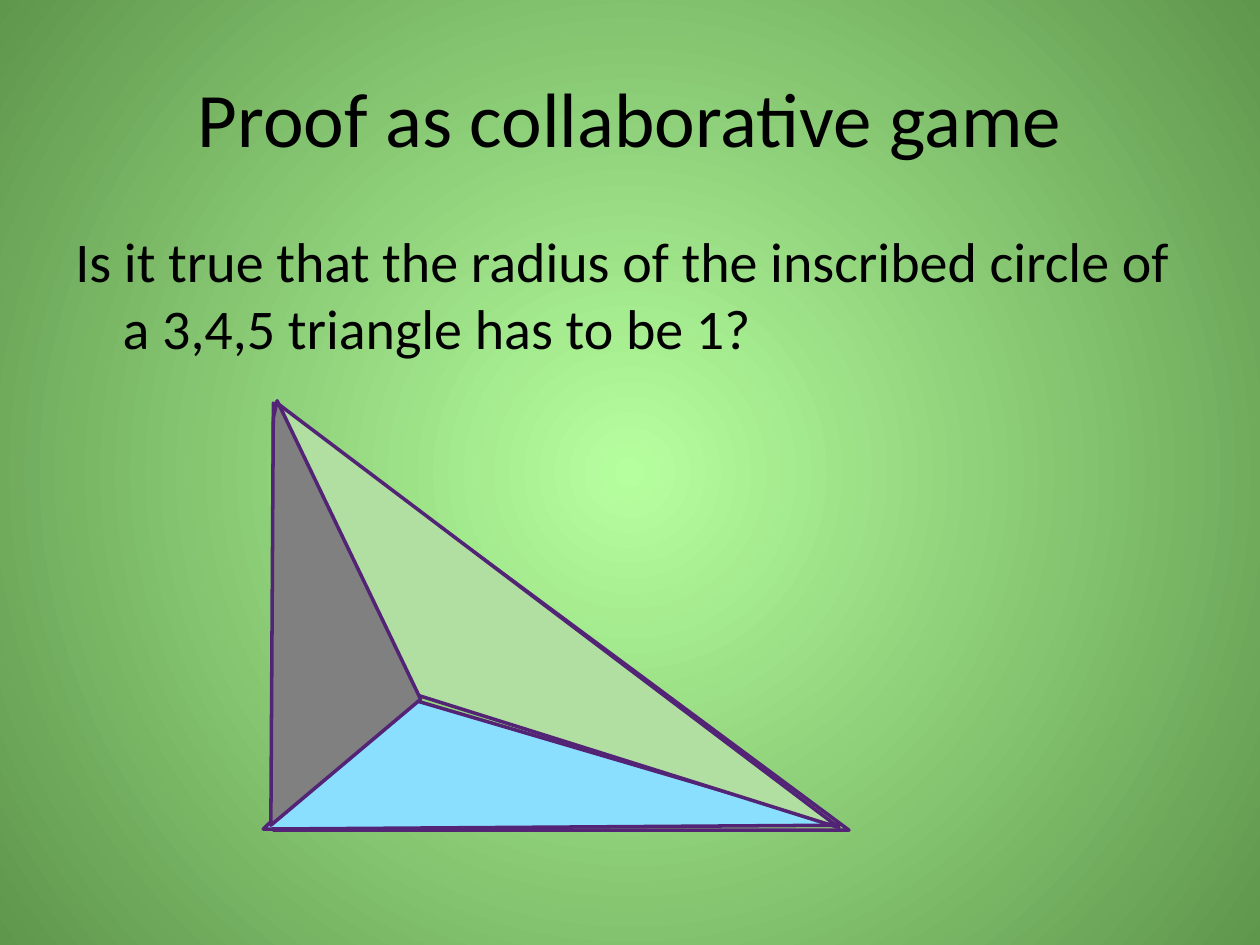
from dataclasses import dataclass

from pptx import Presentation
from pptx.dml.color import RGBColor
from pptx.enum.shapes import MSO_SHAPE
from pptx.enum.text import MSO_ANCHOR, PP_ALIGN
from pptx.oxml import parse_xml
from pptx.oxml.ns import nsdecls, qn
from pptx.util import Pt


@dataclass(frozen=True)
class Theme:
    """Colours, font and sizes of the slide."""
    font: str = "Calibri"
    title_size: float = 44
    body_size: float = 32
    ink: str = "000000"
    glow: str = "B6FF9F"
    edge: str = "5F974C"
    outline: str = "532476"
    outline_width: float = 2
    lower: str = "8ADFFF"
    upper: str = "B0DFA1"
    left: str = "808080"


THEME = Theme()


def paint_background(slide):
    """Fill the background with a radial gradient from the centre."""
    slide.background.fill.gradient()
    gradient = slide.background._cSld.find(".//" + qn("a:gradFill"))
    radial = parse_xml(
        f'<a:gradFill {nsdecls("a")} rotWithShape="1"><a:gsLst>'
        f'<a:gs pos="0"><a:srgbClr val="{THEME.glow}"/></a:gs>'
        f'<a:gs pos="100000"><a:srgbClr val="{THEME.edge}"/></a:gs></a:gsLst>'
        '<a:path path="circle"><a:fillToRect l="50000" t="50000" r="50000" b="50000"/>'
        '</a:path></a:gradFill>')
    gradient.getparent().replace(gradient, radial)


def add_text(slide, text, *, box, size, align=PP_ALIGN.LEFT, anchor=MSO_ANCHOR.TOP, hanging=0, before=0):
    """Place one wrapped paragraph in the box, with an optional hanging indent."""
    textbox = slide.shapes.add_textbox(*map(Pt, box))
    frame = textbox.text_frame
    frame.word_wrap = True
    frame.vertical_anchor = anchor
    paragraph = frame.paragraphs[0]
    paragraph.alignment = align
    paragraph.space_before = Pt(before)
    if hanging:
        properties = paragraph._p.get_or_add_pPr()
        properties.set("marL", str(Pt(hanging)))
        properties.set("indent", str(-Pt(hanging)))
    run = paragraph.add_run()
    run.text = text
    run.font.name = THEME.font
    run.font.size = Pt(size)
    run.font.color.rgb = RGBColor.from_string(THEME.ink)


def style_shape(shape, fill=None):
    """Give a shape the common outline and a flat fill, or none."""
    shape.shadow.inherit = False
    if fill:
        shape.fill.solid()
        shape.fill.fore_color.rgb = RGBColor.from_string(fill)
    else:
        shape.fill.background()
    shape.line.color.rgb = RGBColor.from_string(THEME.outline)
    shape.line.width = Pt(THEME.outline_width)


def add_polygon(slide, corners, fill):
    """Draw a closed outline through the corners."""
    points = [(Pt(x), Pt(y)) for x, y in corners]
    builder = slide.shapes.build_freeform(*points[0])
    builder.add_line_segments(points[1:], close=True)
    style_shape(builder.convert_to_shape(), fill)


def draw_triangle(slide, box):
    """Draw the outline of the right triangle and the three parts within it."""
    left, top, _, _ = box
    style_shape(slide.shapes.add_shape(MSO_SHAPE.RIGHT_TRIANGLE, *map(Pt, box)))
    parts = (
        (THEME.lower, [(76.3, 168.5), (323.3, 241.2), (-5.8, 243.4),
                       (70.6, 170.6), (72.7, 170.6), (79.2, 170.6)]),
        (THEME.upper, [(2.2, 0), (80.6, 166.3), (323.3, 242.6)]),
        (THEME.left, [(2.2, -1.4), (84.2, 169.2), (-1.4, 241.2), (0, 8.6)]),
    )
    for fill, corners in parts:
        add_polygon(slide, [(left + x, top + y) for x, y in corners], fill)


def build_slide(slide, box):
    """Lay out background, title, question and figure in the slide box."""
    left, top, width, _ = box
    margin = 36
    column = width - 2 * margin
    paint_background(slide)
    add_text(slide, "Proof as collaborative game",
             box=(left + margin, top + 21.6, column, 90), size=THEME.title_size,
             align=PP_ALIGN.CENTER, anchor=MSO_ANCHOR.MIDDLE)
    add_text(slide, "Is it true that the radius of the inscribed circle of a 3,4,5 triangle has to be 1?",
             box=(left + margin, top + 126, column, 356.4), size=THEME.body_size,
             hanging=27, before=THEME.body_size * 0.2)
    draw_triangle(slide, (left + 156.2, top + 230.4, 329, 244))


def main():
    """Create and save the presentation."""
    presentation = Presentation()
    presentation.slide_width, presentation.slide_height = Pt(720), Pt(540)
    slide = presentation.slides.add_slide(presentation.slide_layouts[6])
    build_slide(slide, (0, 0, 720, 540))
    presentation.save("out.pptx")


if __name__ == "__main__":
    main()
